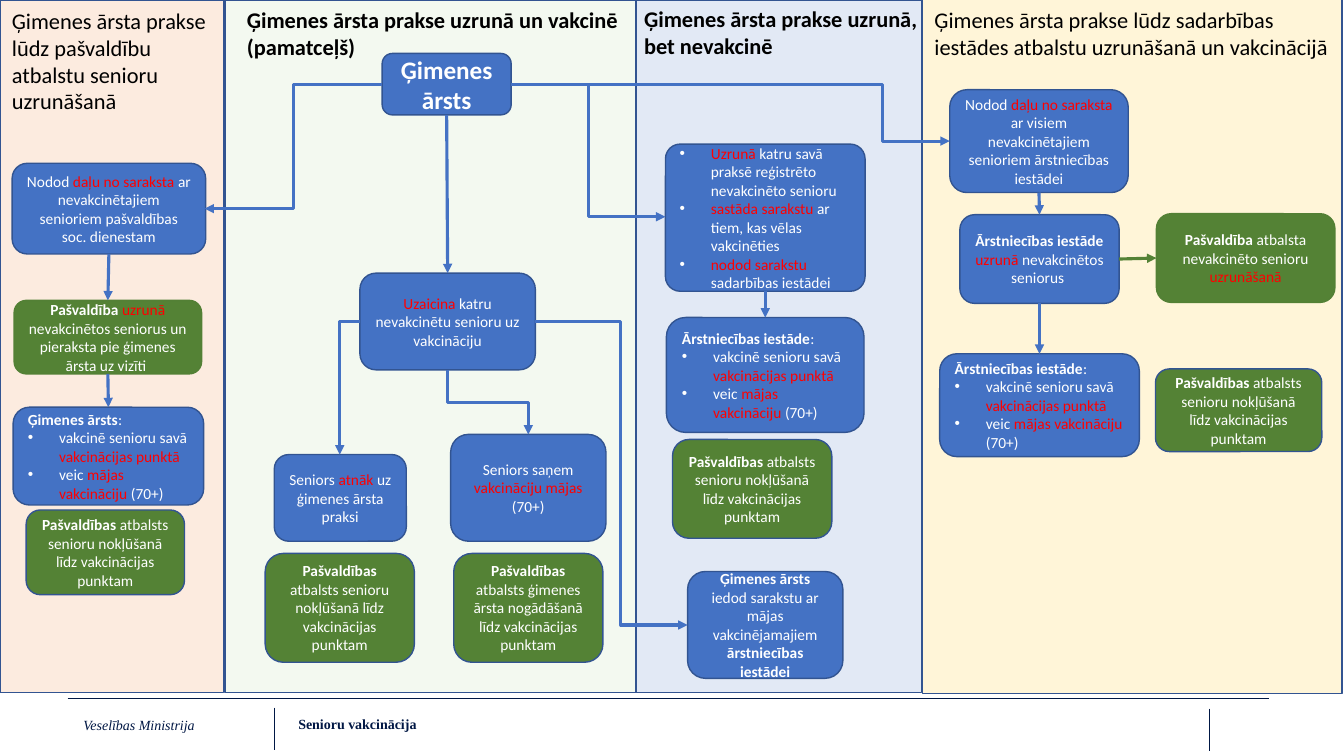
from dataclasses import dataclass

from lxml import etree
from pptx import Presentation
from pptx.dml.color import RGBColor
from pptx.enum.shapes import MSO_CONNECTOR, MSO_SHAPE
from pptx.enum.text import MSO_ANCHOR, MSO_AUTO_SIZE, PP_ALIGN
from pptx.oxml.ns import qn
from pptx.util import Pt

RECT, ROUND = MSO_SHAPE.RECTANGLE, MSO_SHAPE.ROUNDED_RECTANGLE
STRAIGHT, ELBOW = MSO_CONNECTOR.STRAIGHT, MSO_CONNECTOR.ELBOW
MIDDLE, GROW = MSO_ANCHOR.MIDDLE, MSO_AUTO_SIZE.SHAPE_TO_FIT_TEXT
LEFT, CENTER = PP_ALIGN.LEFT, PP_ALIGN.CENTER
TOP, SIDE_L, BOTTOM, SIDE_R = range(4)
SCALE = 9144  # EMU in one px, 100 px to the inch


@dataclass(frozen=True)
class Theme:
    blue: str = "4472C4"
    green: str = "548235"
    edge: str = "325491"
    moss: str = "538035"
    white: str = "FFFFFF"
    black: str = "000000"
    red: str = "FF0000"
    navy: str = "001744"
    peach: str = "F8CBAD"
    mint: str = "E2F0D9"
    sky: str = "B4C7E7"
    sand: str = "FFE699"
    sans: str = "Calibri"
    serif: str = "Times New Roman"
    small: int = 10
    body: int = 11
    title: int = 16
    hub: int = 18


T = Theme()


def px(*nums):
    return [round(n * SCALE) for n in nums]


def rgb(code):
    return RGBColor.from_string(code)


def add_run(para, text, size, color, font=T.sans, bold=False, slant=False):
    run = para.add_run()
    run.text = text
    run.font.size, run.font.name = Pt(size), font
    run.font.bold, run.font.italic = bold, slant
    run.font.color.rgb = rgb(color)


def add_bullet(para):
    props = para._p.get_or_add_pPr()
    indent = px(31)[0]
    props.set("marL", str(indent))
    props.set("indent", str(-indent))
    tint = etree.SubElement(props, qn("a:buClr"))
    etree.SubElement(tint, qn("a:srgbClr"), val=T.white)
    etree.SubElement(props, qn("a:buFont"), typeface="Arial")
    etree.SubElement(props, qn("a:buChar"), char="•")


def add_panel(slide, place, color):
    panel = slide.shapes.add_shape(RECT, *px(*place))
    panel.shadow.inherit = False
    panel.fill.solid()
    panel.fill.fore_color.rgb = rgb(color)
    tint = panel.element.spPr.find(qn("a:solidFill")).find(qn("a:srgbClr"))
    etree.SubElement(tint, qn("a:alpha"), val="38000")
    panel.line.color.rgb = rgb(T.edge)
    panel.line.width = Pt(1)


def add_label(slide, place, text, size, color, **style):
    label = slide.shapes.add_textbox(*px(*place))
    frame = label.text_frame
    frame.word_wrap, frame.auto_size = True, GROW
    add_run(frame.paragraphs[0], text, size, color, **style)


def add_box(slide, place, paras, fill=T.blue, edge=T.edge, size=T.body, curve=None):
    """Each paragraph is (mark, runs): c centred, l left, * bullet.
    Each run is (kind, text): w white, b bold white, r red."""
    box = slide.shapes.add_shape(ROUND, *px(*place))
    if curve:
        box.adjustments[0] = curve
    box.shadow.inherit = False
    box.fill.solid()
    box.fill.fore_color.rgb = rgb(fill)
    box.line.color.rgb = rgb(edge)
    box.line.width = Pt(1)
    frame = box.text_frame
    frame.word_wrap, frame.vertical_anchor = True, MIDDLE
    for i, (mark, runs) in enumerate(paras):
        para = frame.add_paragraph() if i else frame.paragraphs[0]
        para.alignment = CENTER if mark == "c" else LEFT
        if mark == "*":
            add_bullet(para)
        for kind, text in runs:
            add_run(para, text, size, T.red if kind == "r" else T.white, bold=kind == "b")
    return box


def style_line(line, color, width, arrow):
    line.line.color.rgb = rgb(color)
    line.line.width = Pt(width)
    props = line.element.spPr
    if arrow:
        etree.SubElement(props.find(qn("a:ln")), qn("a:tailEnd"), type="triangle")
    etree.SubElement(props, qn("a:effectLst"))


def add_rule(slide, *ends):
    style_line(slide.shapes.add_connector(STRAIGHT, *px(*ends)), T.navy, 0.5, False)


def join(slide, start, end, sides=(BOTTOM, TOP), color=T.blue):
    line = slide.shapes.add_connector(STRAIGHT, 0, 0, 0, 0)
    line.begin_connect(start, sides[0])
    line.end_connect(end, sides[1])
    style_line(line, color, 2.25, True)


def add_elbow(slide, ends, bend=50, shape="bentConnector3", turn=0):
    line = slide.shapes.add_connector(ELBOW, *px(*ends))
    props = line.element.spPr
    geom = props.find(qn("a:prstGeom"))
    geom.set("prst", shape)
    if shape == "bentConnector3":
        guides = geom.find(qn("a:avLst"))
        etree.SubElement(guides, qn("a:gd"), name="adj1", fmla=f"val {round(bend * 1000)}")
    if turn:
        props.find(qn("a:xfrm")).set("rot", str(turn * 60000))
    style_line(line, T.blue, 2.25, True)


def center(*runs):
    return [("c", runs)]


def duties(who):
    return [("l", [("b", who), ("w", ":")]),
            ("*", [("w", "vakcinē senioru savā "), ("r", "vakcinācijas punktā")]),
            ("*", [("w", "veic "), ("r", "mājas vakcināciju "), ("w", "(70+)")])]


def main():
    deck = Presentation()
    deck.slide_width, deck.slide_height = px(1333, 750)
    slide = deck.slides.add_slide(deck.slide_layouts[6])

    # Column panels and headings
    for place, color in [((915, -1, 416, 689), T.sand), ((631, 0, 283, 687), T.sky),
                         ((0, 0, 222, 687), T.peach), ((223, 0, 408, 687), T.mint)]:
        add_panel(slide, place, color)
    for place, text, bold in [
            ((235, 1, 422, 64), "Ģimenes ārsta prakse uzrunā un vakcinē (pamatceļš)", True),
            ((629, 0, 318, 64), "Ģimenes ārsta prakse uzrunā, bet nevakcinē", True),
            ((917, 1, 413, 64), "Ģimenes ārsta prakse lūdz sadarbības iestādes "
             "atbalstu uzrunāšanā un vakcinācijā", False),
            ((2, 2, 220, 118), "Ģimenes ārsta prakse lūdz pašvaldību atbalstu "
             "senioru uzrunāšanā", False)]:
        add_label(slide, place, text, T.title, T.black, bold=bold)

    # Footer
    add_rule(slide, 67, 693, 1259, 693)
    add_rule(slide, 1199, 703, 1199, 745)
    add_rule(slide, 272, 702, 272, 744)
    add_label(slide, (73, 706, 137, 27), "Veselības Ministrija", T.small, T.navy,
              font=T.serif, slant=True)
    add_label(slide, (286, 705, 139, 27), "Senioru vakcinācija", T.small, T.navy,
              font=T.serif, bold=True)

    # Main path
    hub = add_box(slide, (379, 53, 128, 61), center(("b", "Ģimenes ārsts")), size=T.hub)
    invite = add_box(slide, (357, 271, 174, 96), center(
        ("r", "Uzaicina"), ("w", " katru nevakcinētu senioru uz vakcināciju")))
    add_box(slide, (272, 451, 131, 86), center(
        ("w", "Seniors "), ("r", "atnāk"), ("w", " uz ģimenes ārsta praksi")))
    add_box(slide, (447, 431, 154, 106), center(
        ("w", "Seniors saņem "), ("r", "vakcināciju mājas"), ("w", " (70+)")))
    add_box(slide, (450, 549, 148, 108), center(
        ("b", "Pašvaldības"),
        ("w", " atbalsts ģimenes ārsta nogādāšanā līdz vakcinācijas punktam")), T.green)

    # Municipal help with transport, in every column
    for place in [(263, 549, 148, 108), (667, 436, 158, 98),
                  (1146, 366, 165, 82), (26, 506, 157, 84)]:
        add_box(slide, place, center(
            ("b", "Pašvaldības"),
            ("w", " atbalsts senioru nokļūšanā līdz vakcinācijas punktam")), T.green)

    # Practice that invites only
    address = add_box(slide, (660, 143, 198, 146), [
        ("*", [("r", "Uzrunā"), ("w", " katru savā praksē reģistrēto nevakcinēto senioru")]),
        ("*", [("r", "sastāda sarakstu"), ("w", " ar tiem, kas vēlas vakcinēties")]),
        ("*", [("r", "nodod sarakstu "), ("w", "sadarbības iestādei")])], curve=0.1)
    clinic = add_box(slide, (661, 315, 196, 114), duties("Ārstniecības iestāde"))
    add_box(slide, (682, 567, 154, 106), center(
        ("b", "Ģimenes ārsts"), ("w", " iedod sarakstu ar mājas vakcinējamajiem "),
        ("b", "ārstniecības iestādei")))

    # Partner institution
    handoff = add_box(slide, (942, 89, 177, 102), center(
        ("w", "Nodod "), ("r", "daļu no saraksta "),
        ("w", "ar visiem nevakcinētajiem senioriem ārstniecības iestādei")))
    partner = add_box(slide, (952, 213, 158, 88), center(
        ("b", "Ārstniecības iestāde "), ("r", "uzrunā "), ("w", "nevakcinētos seniorus ")))
    support = add_box(slide, (1147, 212, 177, 88), center(
        ("b", "Pašvaldība "), ("w", "atbalsta nevakcinēto senioru "),
        ("r", "uzrunāšanā")), T.green, T.moss)
    site = add_box(slide, (932, 351, 198, 102), duties("Ārstniecības iestāde"))

    # Municipality
    social = add_box(slide, (12, 162, 192, 90), center(
        ("w", "Nodod "), ("r", "daļu no saraksta "),
        ("w", "ar nevakcinētajiem senioriem pašvaldības soc. dienestam")))
    town = add_box(slide, (14, 298, 186, 73), center(
        ("b", "Pašvaldība "), ("r", "uzrunā "),
        ("w", "nevakcinētos seniorus un pieraksta pie ģimenes ārsta uz vizīti ")),
        T.green, T.moss)
    doctor = add_box(slide, (13, 404, 189, 97), duties("Ģimenes ārsts"))

    # Arrows
    for start, end in [(hub, invite), (address, clinic), (handoff, partner),
                       (partner, site), (social, town), (town, doctor)]:
        join(slide, start, end)
    join(slide, partner, support, (SIDE_R, SIDE_L), T.green)
    add_elbow(slide, (516, 359, 452, 439), turn=270)
    add_elbow(slide, (357, 319, 337, 451), shape="bentConnector2")
    add_elbow(slide, (531, 319, 682, 620), 56.1)
    add_elbow(slide, (379, 84, 203, 207))
    add_elbow(slide, (507, 84, 660, 215))
    add_elbow(slide, (508, 84, 942, 140), 84.7)

    deck.save("out.pptx")


if __name__ == "__main__":
    main()
